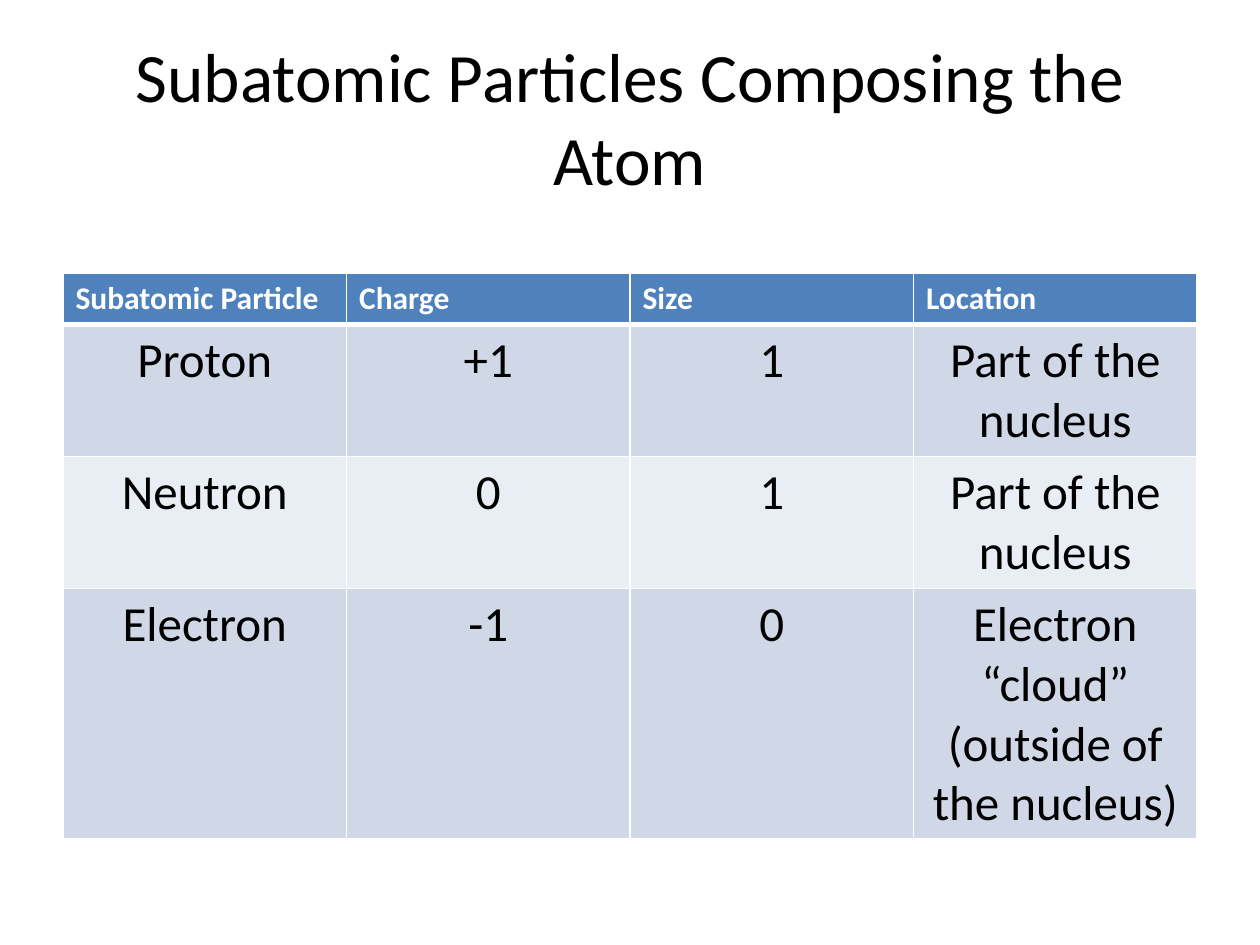
from lxml import etree
from pptx import Presentation
from pptx.dml.color import RGBColor
from pptx.enum.text import MSO_ANCHOR, PP_ALIGN
from pptx.oxml.ns import qn
from pptx.util import Cm, Pt

CENTER, LEFT = PP_ALIGN.CENTER, PP_ALIGN.LEFT
MIDDLE = MSO_ANCHOR.MIDDLE

TITLE = "Subatomic Particles Composing the Atom"
ROWS = [
    ("Subatomic Particle", "Charge", "Size", "Location"),
    ("Proton", "+1", "1", "Part of the nucleus"),
    ("Neutron", "0", "1", "Part of the nucleus"),
    ("Electron", "-1", "0", "Electron “cloud” (outside of the nucleus)"),
]
ROW_HEIGHTS = [1.03, 2.66, 2.66, 5.04]
MARGIN, CONTENT_WIDTH, TABLE_TOP = 1.27, 22.86, 5.51

FONT = "Calibri"
BLACK, WHITE = "000000", "FFFFFF"
HEADER_FILL = "4F81BD"
BAND_FILLS = ["D0D8E8", "E9EDF4"]


def rgb(color):
    return RGBColor.from_string(color)


def style(p, size, color, align, bold=False):
    p.alignment = align
    font = p.font
    font.name, font.size, font.bold = FONT, Pt(size), bold
    font.color.rgb = rgb(color)


def set_borders(cell, color, widths):
    """Draw cell borders; widths maps a side (L, R, T, B) to points."""
    tc_pr = cell._tc.get_or_add_tcPr()
    for side, width in widths.items():
        ln = etree.SubElement(tc_pr, qn(f"a:ln{side}"), w=str(Pt(width)))
        fill = etree.SubElement(ln, qn("a:solidFill"))
        etree.SubElement(fill, qn("a:srgbClr"), val=color)


def add_title(s):
    tf = s.shapes.add_textbox(
        Cm(MARGIN), Cm(0.76), Cm(CONTENT_WIDTH), Cm(3.18)).text_frame
    tf.word_wrap = True
    tf.vertical_anchor = MIDDLE
    p = tf.paragraphs[0]
    p.text = TITLE
    style(p, 39.6, BLACK, CENTER)


def add_particle_table(s):
    n_cols = len(ROWS[0])
    table = s.shapes.add_table(
        len(ROWS), n_cols, Cm(MARGIN), Cm(TABLE_TOP),
        Cm(CONTENT_WIDTH), Cm(sum(ROW_HEIGHTS))).table
    for column in table.columns:
        column.width = Cm(CONTENT_WIDTH / n_cols)
    for i, (texts, height) in enumerate(zip(ROWS, ROW_HEIGHTS)):
        table.rows[i].height = Cm(height)
        header = i == 0
        for j, text in enumerate(texts):
            cell = table.cell(i, j)
            set_borders(cell, WHITE, {
                "L": 1, "R": 1, "T": 3 if i == 1 else 1, "B": 3 if header else 1})
            cell.fill.solid()
            cell.fill.fore_color.rgb = rgb(
                HEADER_FILL if header else BAND_FILLS[(i - 1) % 2])
            p = cell.text_frame.paragraphs[0]
            p.text = text
            if header:
                style(p, 18, WHITE, LEFT, bold=True)
            else:
                style(p, 28, BLACK, CENTER)


def main():
    prs = Presentation()
    prs.slide_width, prs.slide_height = Cm(25.4), Cm(19.05)
    s = prs.slides.add_slide(prs.slide_layouts[6])
    add_title(s)
    add_particle_table(s)
    prs.save("out.pptx")


if __name__ == "__main__":
    main()
